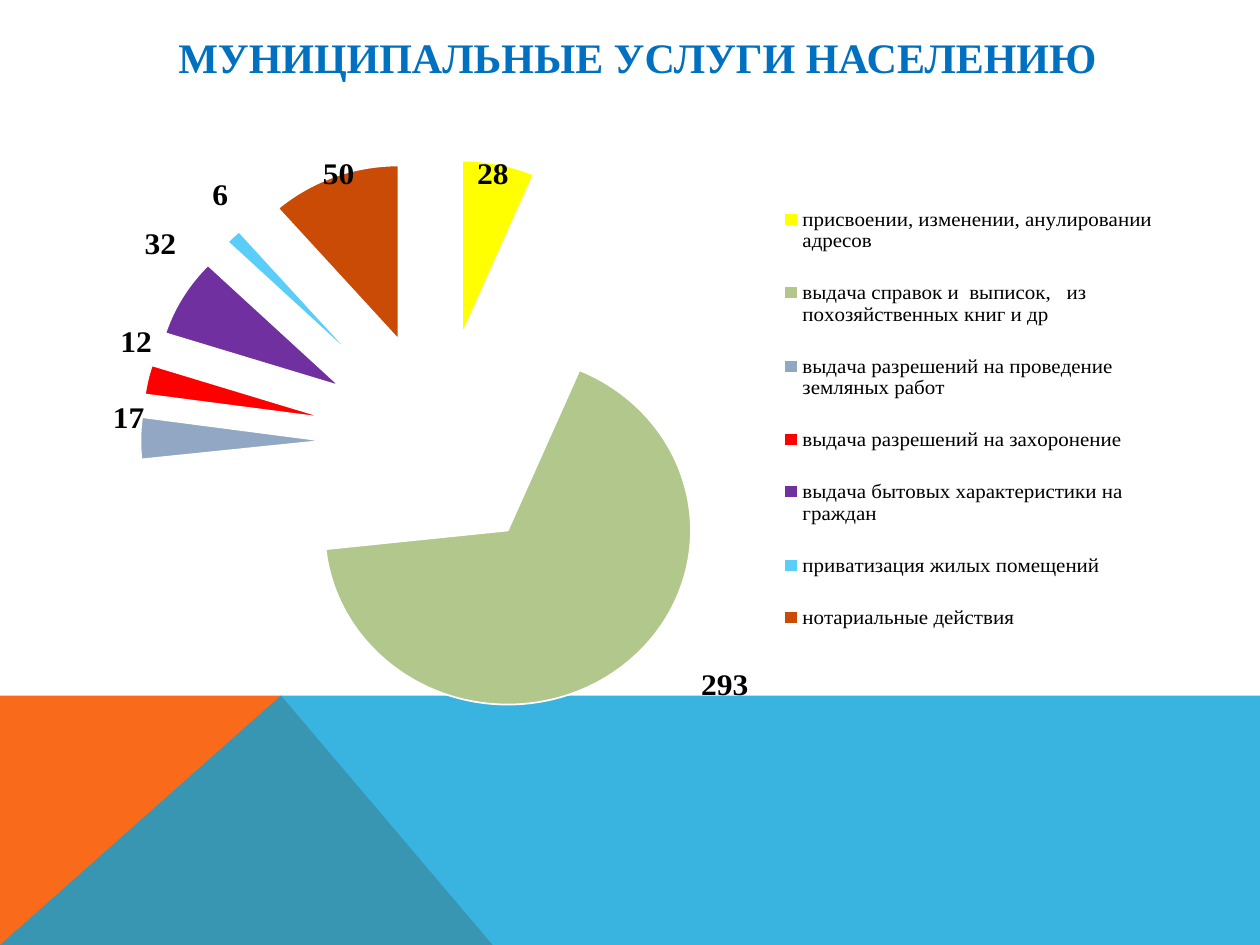
from dataclasses import dataclass

from lxml import etree
from pptx import Presentation
from pptx.chart.data import CategoryChartData
from pptx.dml.color import RGBColor
from pptx.enum.chart import XL_CHART_TYPE, XL_LABEL_POSITION, XL_LEGEND_POSITION
from pptx.enum.text import MSO_ANCHOR, PP_ALIGN
from pptx.oxml import parse_xml
from pptx.oxml.ns import nsdecls, qn
from pptx.util import Inches, Pt

PIE = XL_CHART_TYPE.PIE
OUTSIDE_END = XL_LABEL_POSITION.OUTSIDE_END
LEGEND_RIGHT = XL_LEGEND_POSITION.RIGHT
MIDDLE = MSO_ANCHOR.MIDDLE
CENTER = PP_ALIGN.CENTER


@dataclass(frozen=True)
class Theme:
    font: str = "Times New Roman"
    title: str = "0070C0"
    text: str = "000000"
    edge: str = "FFFFFF"
    title_size: int = 24
    label_size: int = 18
    legend_size: int = 12


@dataclass(frozen=True)
class Band:
    points: tuple
    color: str
    opacity: int


@dataclass(frozen=True)
class Service:
    name: str
    count: int
    color: str
    label_shift: tuple  # share of the chart's width and height


THEME = Theme()
EXPLOSION = 63

BANDS = (
    Band(((0, 7.5), (0, 5.52), (2.23, 5.52), (3.91, 7.5)), "F96A1B", 100),
    Band(((0, 7.5), (2.23, 5.52), (10, 5.52), (10, 7.5)), "08A1D9", 80),
)

SERVICES = (
    Service("присвоении, изменении, анулировании адресов ", 28, "FFFF00", (-0.02, 0.04)),
    Service("выдача справок и  выписок,   из  похозяйственных книг и др", 293, "B2C78C", (0.07, -0.01)),
    Service("выдача разрешений на проведение земляных работ", 17, "91A7C4", (0.01, -0.03)),
    Service("выдача разрешений на захоронение", 12, "FF0000", (0.01, -0.03)),
    Service("выдача бытовых характеристики на граждан ", 32, "7030A0", (0, -0.05)),
    Service("приватизация жилых помещений", 6, "5ACEF9", (0, -0.03)),
    Service("нотариальные действия", 50, "CA4B05", (0.02, 0.02)),
)


def set_font(font, size: int, color: str, bold: bool = False) -> None:
    font.name = THEME.font
    font.size = Pt(size)
    font.bold = bold
    font.color.rgb = RGBColor.from_string(color)


def manual_layout(**values):
    """Build a chart layout element from its named settings, in schema order."""
    settings = "".join(f'<c:{name} val="{value}"/>' for name, value in values.items())
    return parse_xml(
        f'<c:layout {nsdecls("c")}><c:manualLayout>{settings}</c:manualLayout></c:layout>'
    )


def draw_band(slide, band: Band) -> None:
    corners = [(Inches(x), Inches(y)) for x, y in band.points]
    builder = slide.shapes.build_freeform(*corners[0])
    builder.add_line_segments(corners[1:], close=True)
    shape = builder.convert_to_shape()
    shape.shadow.inherit = False
    shape.fill.solid()
    shape.fill.fore_color.rgb = RGBColor.from_string(band.color)
    shape.line.fill.background()
    if band.opacity < 100:
        color = shape.fill._xPr.find(f".//{qn('a:srgbClr')}")
        etree.SubElement(color, qn("a:alpha")).set("val", str(band.opacity * 1000))


def write_title(slide, text: str) -> None:
    title = slide.shapes.title
    title.left, title.top = Inches(0.91), Inches(0.15)
    title.width, title.height = Inches(8.22), Inches(0.6)
    frame = title.text_frame
    frame.text = text
    frame.vertical_anchor = MIDDLE
    frame.margin_left = Inches(0.18)
    paragraph = frame.paragraphs[0]
    paragraph.alignment = CENTER
    set_font(paragraph.font, THEME.title_size, THEME.title, bold=True)


def style_slice(series, index: int, service: Service) -> None:
    point = series.points[index]
    point.format.fill.solid()
    point.format.fill.fore_color.rgb = RGBColor.from_string(service.color)
    point.format.line.color.rgb = RGBColor.from_string(THEME.edge)
    point.format.line.width = Pt(1)
    label = point.data_label
    set_font(label.font, THEME.label_size, THEME.text, bold=True)
    label.position = OUTSIDE_END
    shift_x, shift_y = service.label_shift
    label._get_or_add_dLbl().insert(1, manual_layout(x=shift_x, y=shift_y))


def draw_chart(slide) -> None:
    data = CategoryChartData()
    data.categories = [service.name for service in SERVICES]
    data.add_series("Series 1", [service.count for service in SERVICES])
    chart = slide.shapes.add_chart(
        PIE, Inches(0.35), Inches(0.99), Inches(9.06), Inches(5.43), data
    ).chart
    chart.has_title = False
    set_font(chart.font, THEME.label_size, THEME.text)

    # Legend
    chart.has_legend = True
    legend = chart.legend
    legend.position = LEGEND_RIGHT
    legend.include_in_layout = False
    set_font(legend.font, THEME.legend_size, THEME.text)
    for old_layout in legend._element.findall(qn("c:layout")):
        legend._element.remove(old_layout)
    legend._element.find(qn("c:legendPos")).addnext(
        manual_layout(xMode="edge", yMode="edge", x=0.64, y=0.03, w=0.34, h=0.74)
    )

    # Exploded slices and their labels
    plot = chart.plots[0]
    plot.vary_by_categories = True
    series = plot.series[0]
    for index, service in enumerate(SERVICES):
        style_slice(series, index, service)
    explosion = parse_xml(f'<c:explosion {nsdecls("c")} val="{EXPLOSION}"/>')
    series._element.find(qn("c:dPt")).addprevious(explosion)
    for leader_lines in series._element.iter(qn("c:showLeaderLines")):
        leader_lines.set("val", "0")

    # Plot area
    plot_area = chart._chartSpace.chart.plotArea
    for old_layout in plot_area.findall(qn("c:layout")):
        plot_area.remove(old_layout)
    plot_area.insert(0, manual_layout(
        layoutTarget="inner", xMode="edge", yMode="edge", x=0.035, y=0, w=0.622, h=0.873
    ))


def main() -> None:
    presentation = Presentation()
    presentation.slide_width, presentation.slide_height = Inches(10), Inches(7.5)
    slide = presentation.slides.add_slide(presentation.slide_layouts[5])
    for band in BANDS:
        draw_band(slide, band)
    write_title(slide, "МУНИЦИПАЛЬНЫЕ УСЛУГИ НАСЕЛЕНИЮ")
    draw_chart(slide)
    presentation.save("out.pptx")


if __name__ == "__main__":
    main()
